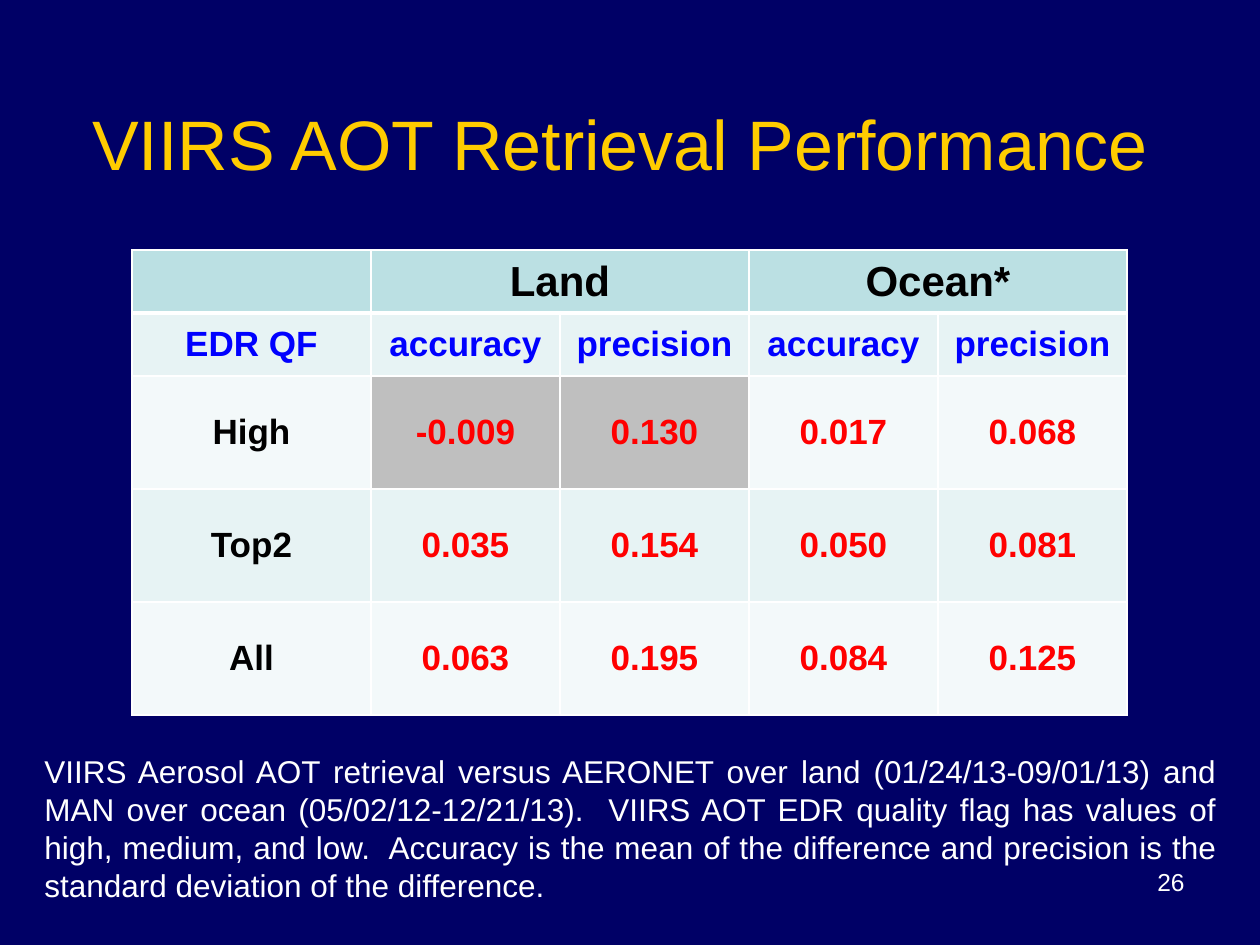
from lxml import etree
from pptx import Presentation
from pptx.dml.color import RGBColor
from pptx.enum.text import MSO_ANCHOR as Anchor, MSO_AUTO_SIZE as AutoSize, PP_ALIGN as Align
from pptx.oxml.ns import qn
from pptx.util import Emu, Pt

EMU_PER_PX = 914400 / 126
COLORS = {
    "background": "000066", "title": "FFCC00", "white": "FFFFFF", "black": "000000",
    "header": "BBE0E3", "band dark": "E7F3F4", "band light": "F3F9FA",
    "highlight": "BFBFBF", "blue": "0000FF", "red": "FF0000",
}
COLUMN_WIDTHS = [239, 189, 189, 189, 189]
ROW_HEIGHTS = [63, 63, 113, 113, 113]
ROWS = [
    ["", "Land", "", "Ocean*", ""],
    ["EDR QF", "accuracy", "precision", "accuracy", "precision"],
    ["High", "-0.009", "0.130", "0.017", "0.068"],
    ["Top2", "0.035", "0.154", "0.050", "0.081"],
    ["All", "0.063", "0.195", "0.084", "0.125"],
]
ROW_FILLS = ["header", "band dark", "band light", "band dark", "band light"]
HIGHLIGHTED_CELLS = {(2, 1), (2, 2)}
SUMMARY = (
    "VIIRS Aerosol AOT retrieval versus AERONET over land (01/24/13-09/01/13) and MAN over "
    "ocean (05/02/12-12/21/13).  VIIRS AOT EDR quality flag has values of high, medium, and "
    "low.  Accuracy is the mean of the difference and precision is the standard deviation "
    "of the difference. "
)


def px(value):
    return Emu(round(value * EMU_PER_PX))


def rgb(name):
    return RGBColor.from_string(COLORS[name])


class SlideBuilder:
    def __init__(self, presentation, font_name="Arial"):
        self.font_name = font_name
        self.slide = presentation.slides.add_slide(presentation.slide_layouts[5])
        background = self.slide.background.fill
        background.solid()
        background.fore_color.rgb = rgb("background")

    def fill_text(self, frame, text, size, color, align, bold=False):
        paragraph = frame.paragraphs[0]
        paragraph.text = text
        paragraph.alignment = align
        font_values = {"name": self.font_name, "size": Pt(size), "bold": bold}
        for name, value in font_values.items():
            setattr(paragraph.font, name, value)
        paragraph.font.color.rgb = rgb(color)

    def title(self, text, left, top, width, height, size):
        shape = self.slide.shapes.title
        box = {"left": left, "top": top, "width": width, "height": height}
        for name, value in box.items():
            setattr(shape, name, px(value))
        frame = shape.text_frame
        frame.auto_size = AutoSize.NONE
        frame.vertical_anchor = Anchor.MIDDLE
        self.fill_text(frame, text, size, "title", Align.CENTER)

    def text(self, text, left, top, width, height, size, align):
        shape = self.slide.shapes.add_textbox(px(left), px(top), px(width), px(height))
        shape.text_frame.word_wrap = True
        self.fill_text(shape.text_frame, text, size, "white", align)

    def borders(self, cell, widths):
        """Draw white cell borders; widths maps a side (L, R, T, B) to points."""
        properties = cell._tc.get_or_add_tcPr()
        for side, width in widths.items():
            line = etree.SubElement(properties, qn(f"a:ln{side}"), w=str(Pt(width)))
            fill = etree.SubElement(line, qn("a:solidFill"))
            etree.SubElement(fill, qn("a:srgbClr"), val=COLORS["white"])

    def cell(self, cell, text, fill, size, color, widths):
        self.borders(cell, widths)
        cell.fill.solid()
        cell.fill.fore_color.rgb = rgb(fill)
        cell.vertical_anchor = Anchor.MIDDLE
        self.fill_text(cell.text_frame, text, size, color, Align.CENTER, bold=True)

    def performance_table(self, left, top):
        table = self.slide.shapes.add_table(
            len(ROWS), len(COLUMN_WIDTHS), px(left), px(top),
            px(sum(COLUMN_WIDTHS)), px(sum(ROW_HEIGHTS))).table
        for column, width in zip(table.columns, COLUMN_WIDTHS):
            column.width = px(width)
        for row, height in zip(table.rows, ROW_HEIGHTS):
            row.height = px(height)
        for first in (1, 3):
            table.cell(0, first).merge(table.cell(0, first + 1))
        for r, values in enumerate(ROWS):
            widths = {"L": 1, "R": 1, "T": 3 if r == 1 else 1, "B": 3 if r == 0 else 1}
            for c, text in enumerate(values):
                fill = "highlight" if (r, c) in HIGHLIGHTED_CELLS else ROW_FILLS[r]
                if r == 1:
                    color = "blue"
                else:
                    color = "red" if r > 1 and c > 0 else "black"
                self.cell(table.cell(r, c), text, fill, 24 if r == 0 else 20, color, widths)


def main():
    presentation = Presentation()
    presentation.slide_width, presentation.slide_height = px(1260), px(945)
    builder = SlideBuilder(presentation)
    builder.title("VIIRS AOT Retrieval Performance ", 63, 63, 1134, 158, size=40)
    builder.text("26", 903, 861, 294, 66, size=14, align=Align.RIGHT)
    builder.performance_table(132, 250)
    builder.text(SUMMARY, 32, 746, 1197, 165, size=18, align=Align.JUSTIFY)
    presentation.save("out.pptx")


if __name__ == "__main__":
    main()
